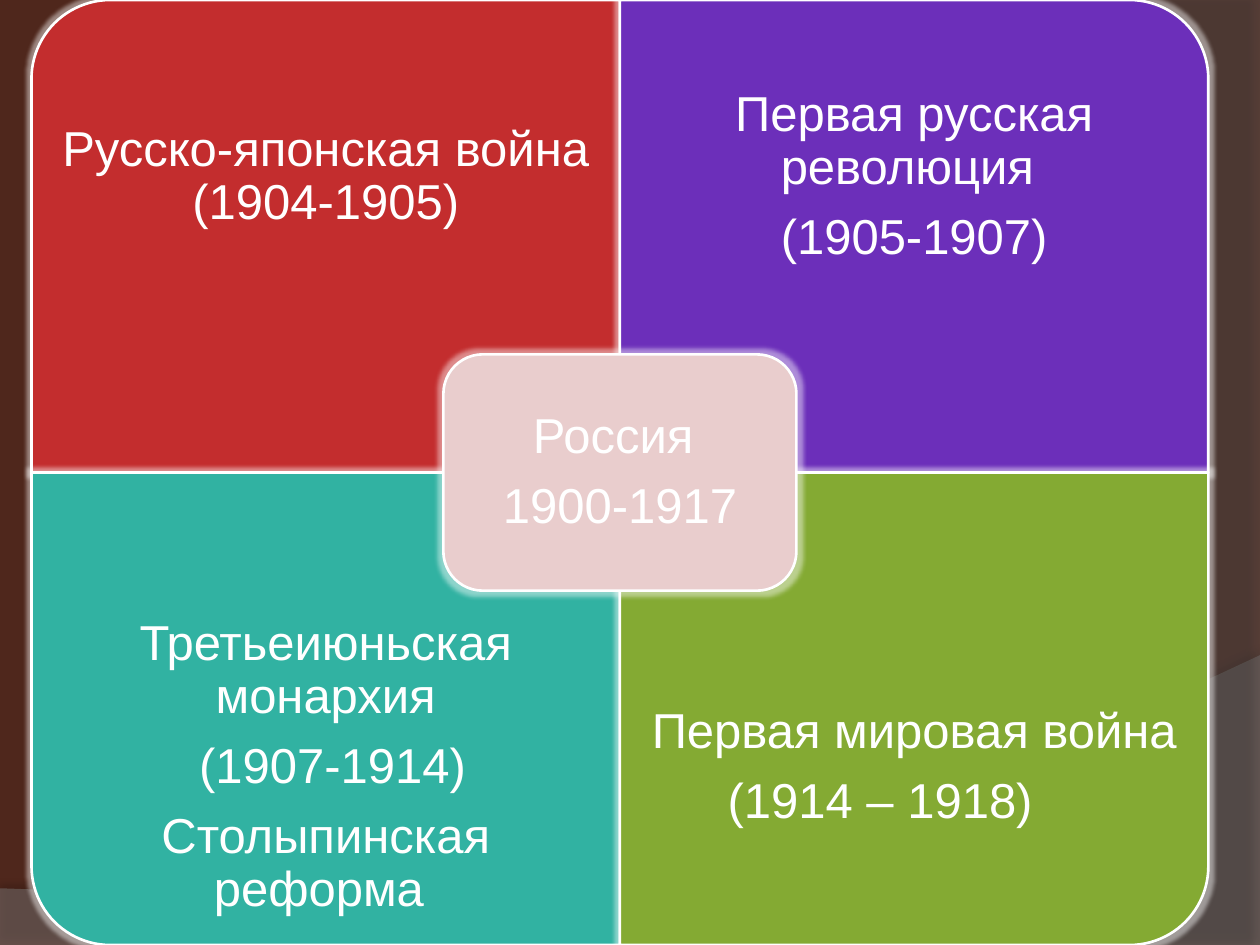
from lxml import etree
from pptx import Presentation
from pptx.dml.color import RGBColor
from pptx.enum.shapes import MSO_SHAPE
from pptx.enum.text import MSO_ANCHOR, PP_ALIGN
from pptx.oxml.ns import qn
from pptx.util import Inches, Pt

CORNER_CARD = MSO_SHAPE.ROUND_1_RECTANGLE
CENTER_CARD = MSO_SHAPE.ROUNDED_RECTANGLE
MIDDLE = MSO_ANCHOR.MIDDLE
CENTER = PP_ALIGN.CENTER

WIDTH, HEIGHT = 10, 7.5
COLORS = {
    "background": "4F271C", "wave": "7F7F7F", "side": "5E5E5E",
    "shadow": "000000", "white": "FFFFFF", "red": "C32D2E",
    "violet": "6C2FBA", "teal": "31B2A2", "green": "84AA33", "pink": "E9CDCD",
}
QUADRANTS = [
    (0, 0, 270, "red", ["Русско-японская война (1904-1905)"]),
    (1, 0, 0, "violet", ["Первая русская революция ", "(1905-1907)"]),
    (0, 1, 180, "teal",
     ["Третьеиюньская монархия", " (1907-1914)", "Столыпинская реформа "]),
    (1, 1, 90, "green", ["Первая мировая война", "(1914 – 1918)"]),
]
RIGHT_INDENTS = {"(1914 – 1918)": 0.54}
CENTER_TEXT = ["Россия ", "1900-1917"]
DECORATIONS = [
    ("wave", 45, 35, 3.5, 270, (10, 5.2),
     [(5.59, 7.29), (3.91, 7.19), (0, 7.05)], [(0, 7.5), (10, 7.5)]),
    ("side", 40, 45, 4, 180, (8.21, 7.5),
     [(9.35, 6.19), (10.18, 3), (8, 0)], [(10, 0), (10, 7.5)]),
]
GRID_LEFT = 0.25
CELL_WIDTH, CELL_HEIGHT = 4.67, HEIGHT / 2
TEXT_HEIGHT = CELL_HEIGHT * 0.75
CENTER_WIDTH, CENTER_HEIGHT = CELL_WIDTH * 0.6, CELL_HEIGHT * 0.5
CENTER_PADDING = 0.09
CURVE_STEPS = 40


def color(name):
    return RGBColor.from_string(COLORS[name])


def add_alpha(color_element, percent):
    etree.SubElement(color_element, qn("a:alpha"), val=str(percent * 1000))


def add_effect(shape, tag, color_name, percent, **settings):
    shape.shadow.inherit = False
    effects = shape._element.spPr.find(qn("a:effectLst"))
    effect = etree.SubElement(effects, qn(tag), **settings)
    add_alpha(etree.SubElement(effect, qn("a:srgbClr"), val=COLORS[color_name]), percent)


def curve_points(start, controls):
    points = [start, *controls]
    for step in range(1, CURVE_STEPS + 1):
        t = step / CURVE_STEPS
        weights = [(1 - t) ** 3, 3 * t * (1 - t) ** 2, 3 * t * t * (1 - t), t ** 3]
        yield tuple(
            Inches(sum(weight * point[axis] for weight, point in zip(weights, points)))
            for axis in (0, 1)
        )


def add_decoration(slide, name, opacity, shadow_opacity, distance, angle,
                   start, controls, corners):
    builder = slide.shapes.build_freeform(Inches(start[0]), Inches(start[1]))
    outline = list(curve_points(start, controls))
    outline += [(Inches(x), Inches(y)) for x, y in corners]
    builder.add_line_segments(outline, close=True)
    shape = builder.convert_to_shape()
    shape.fill.solid()
    shape.fill.fore_color.rgb = color(name)
    add_alpha(shape._element.spPr.find(qn("a:solidFill"))[0], opacity)
    shape.line.fill.background()
    add_effect(shape, "a:outerShdw", "shadow", shadow_opacity,
               blurRad=str(Pt(4)), dist=str(Pt(distance)), dir=str(angle * 60000))


def add_card(slide, kind, left, top, width, height, fill, rotation=0):
    if rotation % 180:
        left, top = left + (width - height) / 2, top + (height - width) / 2
        width, height = height, width
    shape = slide.shapes.add_shape(kind, *map(Inches, (left, top, width, height)))
    shape.rotation = rotation
    shape.fill.solid()
    shape.fill.fore_color.rgb = color(fill)
    shape.line.color.rgb = color("white")
    shape.line.width = Pt(1.5)
    add_effect(shape, "a:glow", "white", 45, rad=str(Pt(5)))


def add_label(slide, left, top, width, height, inset, lines):
    box = slide.shapes.add_textbox(*map(Inches, (left, top, width, height)))
    frame = box.text_frame
    frame.word_wrap = True
    frame.vertical_anchor = MIDDLE
    frame.margin_left = frame.margin_right = Inches(inset)
    frame.margin_top = frame.margin_bottom = Inches(inset)
    frame.text = "\n".join(lines)
    for paragraph in frame.paragraphs:
        paragraph.alignment = CENTER
        paragraph.line_spacing = 0.9
        paragraph.space_after = Pt(9.8)
        indent = RIGHT_INDENTS.get(paragraph.text)
        if indent:
            paragraph._p.get_or_add_pPr().set("marR", str(Inches(indent)))
        for run in paragraph.runs:
            run.font.size = Pt(28)
            run.font.name = "Arial"
            run.font.color.rgb = color("white")


def main():
    presentation = Presentation()
    presentation.slide_width = Inches(WIDTH)
    presentation.slide_height = Inches(HEIGHT)
    slide = presentation.slides.add_slide(presentation.slide_layouts[6])
    slide.background.fill.solid()
    slide.background.fill.fore_color.rgb = color("background")

    for decoration in DECORATIONS:
        add_decoration(slide, *decoration)

    for column, row, rotation, fill, lines in QUADRANTS:
        left, top = GRID_LEFT + column * CELL_WIDTH, row * CELL_HEIGHT
        add_card(slide, CORNER_CARD, left, top, CELL_WIDTH, CELL_HEIGHT, fill, rotation)
        text_top = top + row * (CELL_HEIGHT - TEXT_HEIGHT)
        add_label(slide, left, text_top, CELL_WIDTH, TEXT_HEIGHT, 0.22, lines)

    left = GRID_LEFT + CELL_WIDTH - CENTER_WIDTH / 2
    top = CELL_HEIGHT - CENTER_HEIGHT / 2
    add_card(slide, CENTER_CARD, left, top, CENTER_WIDTH, CENTER_HEIGHT, "pink")
    add_label(slide, left + CENTER_PADDING, top + CENTER_PADDING,
              CENTER_WIDTH - 2 * CENTER_PADDING, CENTER_HEIGHT - 2 * CENTER_PADDING,
              0.12, CENTER_TEXT)
    presentation.save("out.pptx")


if __name__ == "__main__":
    main()
